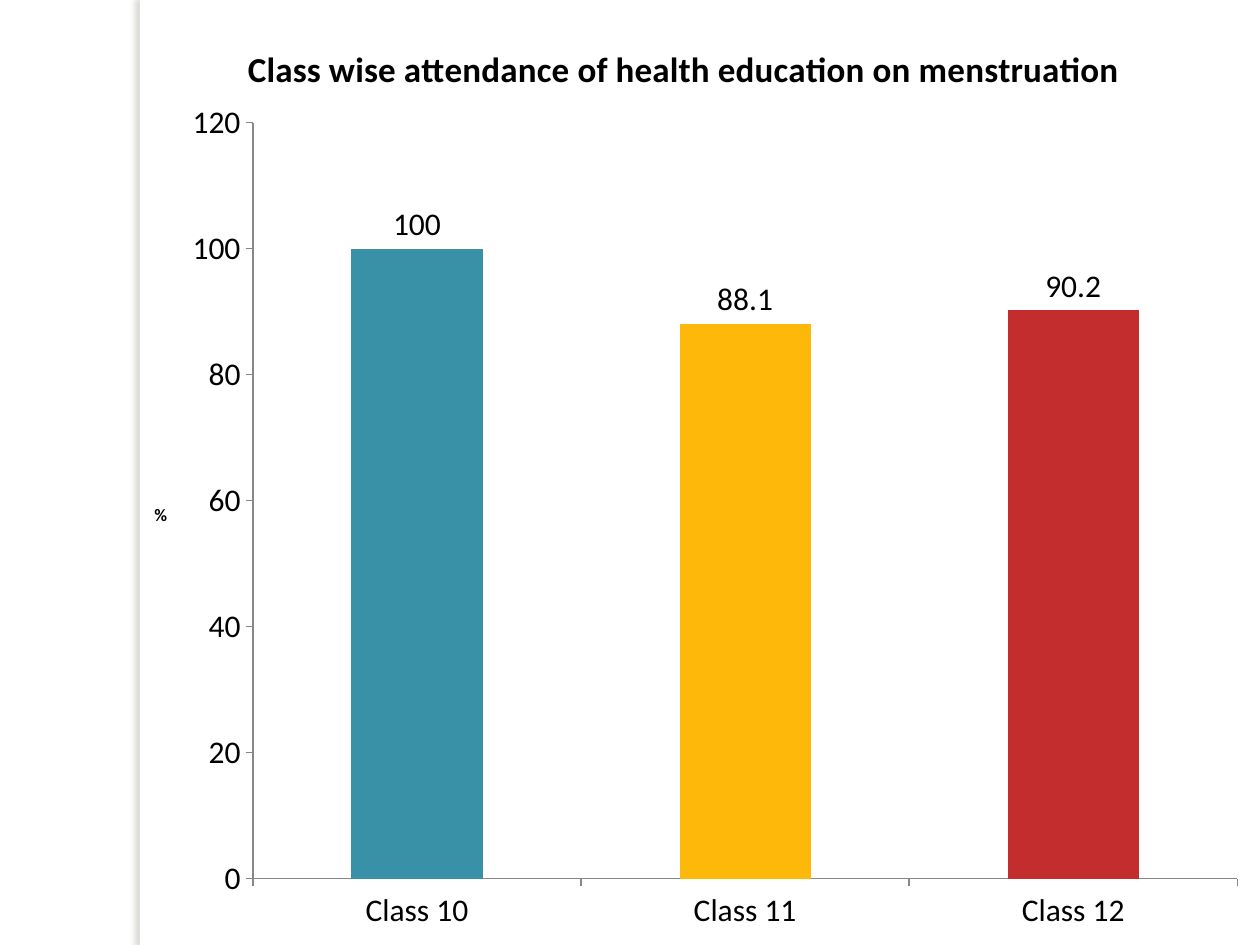
from lxml import etree
from pptx import Presentation
from pptx.chart.data import CategoryChartData
from pptx.dml.color import RGBColor
from pptx.enum import chart as ch, shapes
from pptx.oxml import parse_xml
from pptx.oxml.ns import nsdecls, qn
from pptx.util import Cm, Pt

TEAL = RGBColor(0x38, 0x91, 0xA7)
AMBER = RGBColor(0xFE, 0xB8, 0x0A)
RED = RGBColor(0xC3, 0x2D, 0x2E)
BLACK = RGBColor(0, 0, 0)
GREY = RGBColor(0x87, 0x87, 0x87)
WHITE = RGBColor(0xFF, 0xFF, 0xFF)

TITLE = "Class wise attendance of health education on menstruation"
AXIS_TITLE = "%"
ATTENDANCE = [("Class 10", 100, TEAL), ("Class 11", 88.1, AMBER), ("Class 12", 90.2, RED)]

W, H = Cm(25.4), Cm(19.05)
CHART_LEFT = Cm(2.59)


def set_font(font, size, bold=False):
    font.name, font.size, font.bold = "Calibri", Pt(size), bold
    font.color.rgb = BLACK


def place(element, **fractions):
    """Fix a chart part at fractions of the chart's size."""
    for old in element.findall(qn("c:layout")):
        element.remove(old)
    layout = parse_xml(f"<c:layout {nsdecls('c')}><c:manualLayout/></c:layout>")
    manual = layout[0]
    if "w" in fractions:
        etree.SubElement(manual, qn("c:layoutTarget")).set("val", "inner")
    for key in ("xMode", "yMode"):
        etree.SubElement(manual, qn("c:" + key)).set("val", "edge")
    for key, value in fractions.items():
        etree.SubElement(manual, qn("c:" + key)).set("val", str(value))
    text = element.find(qn("c:tx"))
    element.insert(0 if text is None else 1, layout)


def add_title(owner, words, size, x, y):
    title = owner.chart_title if hasattr(owner, "chart_title") else owner.axis_title
    r = title.text_frame.paragraphs[0].add_run()
    r.text = words
    set_font(r.font, size, True)
    place(title._element, x=x, y=y)
    return title


def add_side_strip(s):
    sp = s.shapes.add_shape(shapes.MSO_SHAPE.RECTANGLE, Cm(2.82), 0, Cm(0.2), H)
    sp.fill.solid()
    sp.fill.fore_color.rgb = WHITE
    sp.line.fill.background()
    sp._element.spPr.append(parse_xml(
        f'<a:effectLst {nsdecls("a")}><a:outerShdw blurRad="{Pt(3)}" dist="{Pt(3)}" '
        'dir="10800000" algn="tl" rotWithShape="0"><a:srgbClr val="736F63">'
        '<a:alpha val="25000"/></a:srgbClr></a:outerShdw></a:effectLst>'))


def add_attendance_chart(s):
    data = CategoryChartData()
    data.categories = [name for name, _, _ in ATTENDANCE]
    data.add_series("Series 1", [value for _, value, _ in ATTENDANCE])
    chart = s.shapes.add_chart(ch.XL_CHART_TYPE.COLUMN_CLUSTERED, CHART_LEFT, 0,
                               W - CHART_LEFT, H, data).chart
    set_font(chart.font, 10)
    chart.has_legend = False
    add_title(chart, TITLE, 20, 0.1, 0.04)
    chart._chartSpace.find(qn("c:chart")).addnext(parse_xml(
        f"<c:spPr {nsdecls('c', 'a')}><a:noFill/><a:ln><a:noFill/></a:ln></c:spPr>"))
    place(chart._chartSpace.chart.plotArea, x=0.11, y=0.13, w=0.87, h=0.8)

    for axis in (chart.category_axis, chart.value_axis):
        axis.has_major_gridlines = False
        axis.major_tick_mark = ch.XL_TICK_MARK.OUTSIDE
        axis.minor_tick_mark = ch.XL_TICK_MARK.NONE
        axis.format.line.color.rgb = GREY
        axis.format.line.width = Pt(0.75)
        set_font(axis.tick_labels.font, 18)
    axis = chart.value_axis
    axis.minimum_scale, axis.maximum_scale, axis.major_unit = 0, 120, 20
    title = add_title(axis, AXIS_TITLE, 10, 0.02, 0.53)
    title.text_frame._txBody.bodyPr.set("rot", "0")
    title.text_frame._txBody.bodyPr.set("vert", "horz")

    plot = chart.plots[0]
    plot.gap_width = 150
    plot.vary_by_categories = False
    plot.has_data_labels = True
    labels = plot.data_labels
    labels.show_value = True
    labels.position = ch.XL_LABEL_POSITION.OUTSIDE_END
    set_font(labels.font, 18)
    for i, (_, _, colour) in enumerate(ATTENDANCE):
        fill = plot.series[0].points[i].format.fill
        fill.solid()
        fill.fore_color.rgb = colour


prs = Presentation()
prs.slide_width, prs.slide_height = W, H
s = prs.slides.add_slide(prs.slide_layouts[6])
add_side_strip(s)
add_attendance_chart(s)
prs.save("out.pptx")
